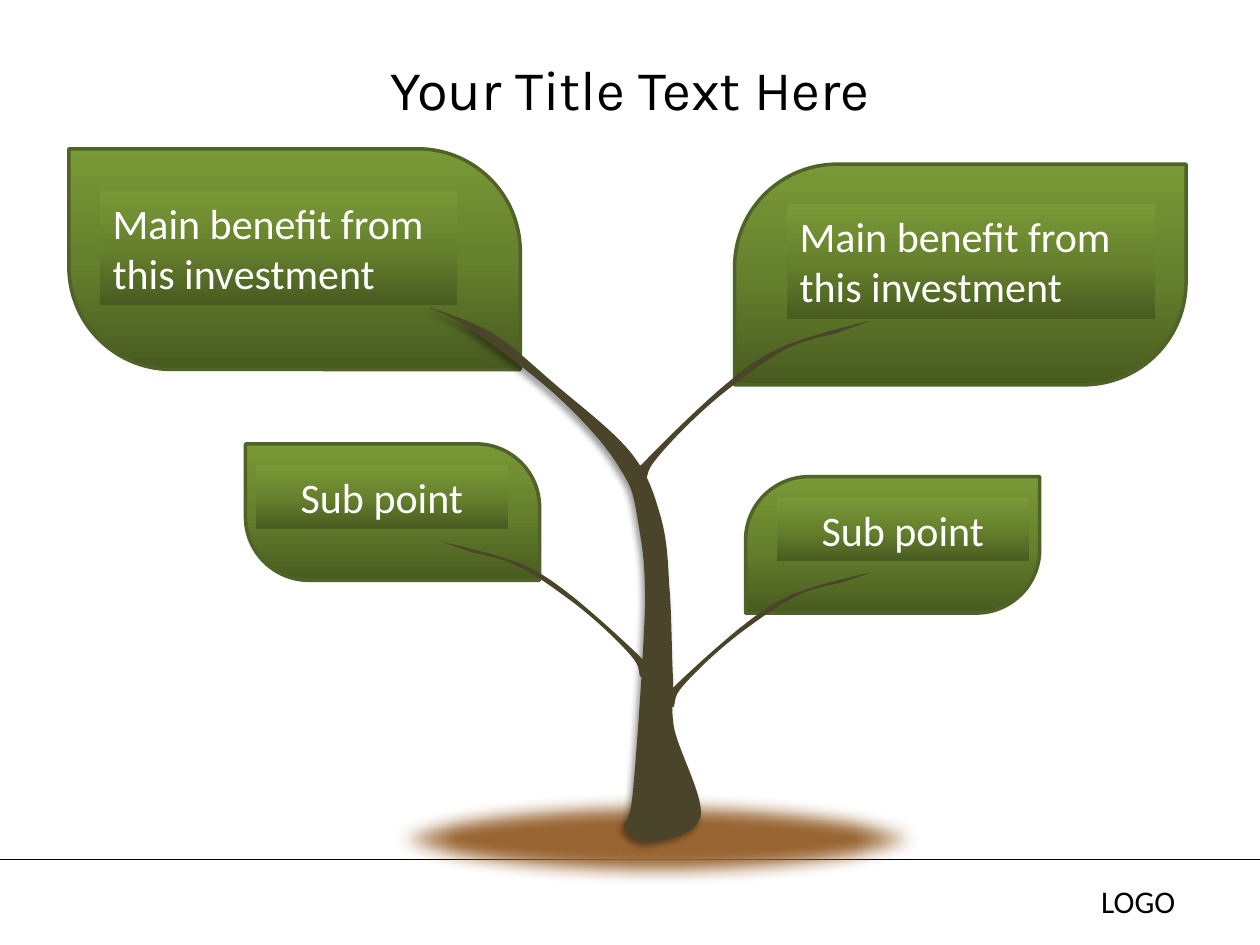
from lxml import etree
from pptx import Presentation
from pptx.dml.color import RGBColor
from pptx.enum.shapes import MSO_CONNECTOR, MSO_SHAPE
from pptx.enum.text import MSO_ANCHOR, MSO_AUTO_SIZE, PP_ALIGN
from pptx.oxml.ns import qn
from pptx.util import Cm, Pt

ELLIPSE, RECTANGLE = MSO_SHAPE.OVAL, MSO_SHAPE.RECTANGLE
LEAF = MSO_SHAPE.ROUND_2_DIAG_RECTANGLE
STRAIGHT = MSO_CONNECTOR.STRAIGHT
TOP, MIDDLE = MSO_ANCHOR.TOP, MSO_ANCHOR.MIDDLE
GROW, FIXED = MSO_AUTO_SIZE.SHAPE_TO_FIT_TEXT, MSO_AUTO_SIZE.NONE
LEFT, CENTER = PP_ALIGN.LEFT, PP_ALIGN.CENTER

BLACK, WHITE, BARK, SOIL, LEAF_EDGE = "000000", "FFFFFF", "4A452A", "996633", "4F6228"
LEAF_STOPS = [(0, "485B20", 100), (50, "66812D", 100), (100, "799936", 100)]
SOIL_STOPS = [(0, SOIL, 100), (68, SOIL, 100), (100, SOIL, 25)]
BIG_LEAF, SMALL_LEAF = (9.1, 4.45), (5.93, 2.75)
BENEFIT, SUB_POINT = "Main benefit from this investment", "Sub point"

TWIG_SIZE = (190, 133)
TWIG = [
    (3, 116), (24, 94), (46, 73), (64, 57), (83, 41), (94, 32), (113, 23),
    (133, 14), (174, 4), (182, 2), (190, 0), (169, 7), (159, 11),
    (148, 14), (134, 16), (120, 23), (105, 30), (87, 44), (73, 55),
    (60, 65), (47, 77), (37, 87), (27, 97), (17, 108), (12, 115),
    (6, 123), (8, 131), (6, 132), (4, 133), (0, 123), (0, 119),
    (0, 116), (9, 113), (9, 113), (9, 113),
]
TRUNK_SIZE = (221, 426)
TRUNK = [
    (157, 412), (155, 406), (161, 416), (164, 387), (167, 357), (173, 271), (174, 235),
    (174, 198), (171, 186), (168, 168), (165, 150), (164, 143), (154, 128),
    (145, 112), (128, 93), (109, 75), (90, 57), (56, 31), (38, 19),
    (21, 6), (0, 0), (3, 0), (5, 1), (35, 10), (52, 20),
    (70, 31), (87, 48), (106, 64), (125, 80), (151, 100), (164, 117),
    (177, 134), (181, 148), (186, 165), (191, 182), (192, 198), (193, 219),
    (195, 240), (195, 273), (196, 292), (197, 311), (194, 316), (197, 334),
    (201, 353), (221, 389), (218, 404), (215, 419), (188, 423), (178, 424),
    (168, 426), (160, 418), (157, 412),
]


def rgb(value):
    """Turn a hex string into a colour."""
    return RGBColor.from_string(value)


def box(*lengths):
    """Turn centimetre values into lengths."""
    return [Cm(length) for length in lengths]


def add_xml(parent, tag, **attributes):
    """Append a drawing element with its attributes."""
    element = etree.SubElement(parent, qn(tag))
    for name, value in attributes.items():
        element.set(name, str(value))
    return element


def add_color(parent, color, opacity):
    """Append a colour with its opacity in percent."""
    shade = add_xml(parent, "a:srgbClr", val=color)
    if opacity < 100:
        add_xml(shade, "a:alpha", val=opacity * 1000)


def fill_gradient(part, stops, radial=False):
    """Fill a part with a rising or radial gradient."""
    part.fill.gradient()
    gradient = part._element.spPr.find(qn("a:gradFill"))
    for child in list(gradient):
        gradient.remove(child)
    stop_list = add_xml(gradient, "a:gsLst")
    for position, color, opacity in stops:
        add_color(add_xml(stop_list, "a:gs", pos=position * 1000), color, opacity)
    if radial:
        centre = add_xml(gradient, "a:path", path="circle")
        add_xml(centre, "a:fillToRect", l=50000, t=50000, r=50000, b=50000)
    else:
        add_xml(gradient, "a:lin", ang=270 * 60000, scaled=0)


def write_text(part, text, size, font, color, align, anchor=TOP, auto_size=GROW):
    """Write one formatted paragraph into a part."""
    frame = part.text_frame
    frame.text = text
    paragraph = frame.paragraphs[0]
    run = paragraph.runs[0]
    formats = {
        frame: {"word_wrap": True, "auto_size": auto_size, "vertical_anchor": anchor},
        paragraph: {"alignment": align},
        run.font: {"size": Pt(size), "name": font},
    }
    for target, values in formats.items():
        for name, value in values.items():
            setattr(target, name, value)
    run.font.color.rgb = rgb(color)


def add_title(slide, text):
    """Place the slide title."""
    title = slide.shapes.title
    for name, length in zip(("left", "top", "width", "height"), box(1.27, 0.51, 22.86, 2.54)):
        setattr(title, name, length)
    write_text(title, text, 32, "Karla", BLACK, CENTER, MIDDLE, FIXED)


def add_footer(slide):
    """Draw the ground line and the footer word."""
    ground = slide.shapes.add_connector(STRAIGHT, *box(0, 17.32, 25.4, 17.32))
    ground.line.color.rgb = rgb(BLACK)
    ground.line.width = Pt(0.75)
    add_xml(ground._element.spPr, "a:effectLst")
    footer = slide.shapes.add_textbox(*box(21.95, 17.65, 2.82, 1.02))
    write_text(footer, "LOGO", 18, "Calibri", BLACK, LEFT)


def add_soil(slide):
    """Draw the soft patch of soil."""
    soil = slide.shapes.add_shape(ELLIPSE, *box(7.42, 15.95, 11.63, 1.91))
    soil.shadow.inherit = False
    soil.line.fill.background()
    fill_gradient(soil, SOIL_STOPS, radial=True)
    add_xml(soil._element.spPr.find(qn("a:effectLst")), "a:softEdge", rad=Pt(10))


def add_leaf(slide, corner, size, label_box, text, align, flipped=False):
    """Group a leaf with its label."""
    parts = slide.shapes.add_group_shape().shapes
    leaf = parts.add_shape(LEAF, *box(*corner, *size))
    leaf.adjustments[0], leaf.adjustments[1] = 0.465, 0
    leaf.line.color.rgb = rgb(LEAF_EDGE)
    leaf.line.width = Pt(2)
    if flipped:
        leaf._element.spPr.find(qn("a:xfrm")).set("flipH", "1")
    label = parts.add_shape(RECTANGLE, *box(*label_box))
    label.line.fill.background()
    write_text(label, text, 24, "Calibri", WHITE, align)
    for part in (leaf, label):
        part.shadow.inherit = False
        fill_gradient(part, LEAF_STOPS)


def bend_outline(wood):
    """Turn each three outline points into one cubic curve."""
    outline = wood._element.spPr.find(".//" + qn("a:path"))
    sides = outline.findall(qn("a:lnTo"))
    for first in range(0, len(sides) - 2, 3):
        curve = add_xml(outline, "a:cubicBezTo")
        sides[first].addprevious(curve)
        for side in sides[first:first + 3]:
            curve.append(side[0])
            outline.remove(side)


def add_wood(slide, points, units, place, mirrored=False, close=False):
    """Draw a trunk or twig scaled into its place."""
    left, top, width, height = box(*place)
    spots = [
        (left + (units[0] - x if mirrored else x) * width / units[0], top + y * height / units[1])
        for x, y in points
    ]
    builder = slide.shapes.build_freeform(*spots[0])
    builder.add_line_segments(spots[1:], close=close)
    wood = builder.convert_to_shape()
    bend_outline(wood)
    wood.shadow.inherit = False
    wood.fill.solid()
    wood.fill.fore_color.rgb = rgb(BARK)
    wood.line.fill.background()
    return wood


def add_trunk(slide):
    """Draw the trunk with its shadow."""
    trunk = add_wood(slide, TRUNK, TRUNK_SIZE, (8.59, 6.2, 5.61, 10.82), close=True)
    effects = trunk._element.spPr.find(qn("a:effectLst"))
    shadow = add_xml(effects, "a:outerShdw", blurRad=Pt(4), dist=Pt(3), dir=135 * 60000,
                     algn="tr", rotWithShape=0)
    add_color(shadow, BLACK, 40)


def main():
    """Build the tree slide."""
    deck = Presentation()
    deck.slide_width, deck.slide_height = box(25.4, 19.05)
    slide = deck.slides.add_slide(deck.slide_layouts[5])
    add_title(slide, "Your Title Text Here")
    add_footer(slide)
    add_soil(slide)
    add_leaf(slide, (15.03, 9.61), SMALL_LEAF, (15.66, 10.04, 5.08, 1.28), SUB_POINT, CENTER)
    add_leaf(slide, (14.81, 3.31), BIG_LEAF, (15.87, 4.12, 7.42, 2.31), BENEFIT, LEFT)
    add_leaf(slide, (1.39, 3), BIG_LEAF, (2.02, 3.85, 7.2, 2.31), BENEFIT, LEFT, True)
    add_wood(slide, TWIG, TWIG_SIZE, (12.85, 6.43, 4.83, 3.38))
    add_trunk(slide)
    add_leaf(slide, (4.95, 8.95), SMALL_LEAF, (5.16, 9.38, 5.08, 1.28), SUB_POINT, CENTER, True)
    add_wood(slide, TWIG, TWIG_SIZE, (13.44, 11.51, 4.24, 2.77))
    add_wood(slide, TWIG, TWIG_SIZE, (8.81, 10.9, 4.24, 2.77), mirrored=True)
    deck.save("out.pptx")


if __name__ == "__main__":
    main()
